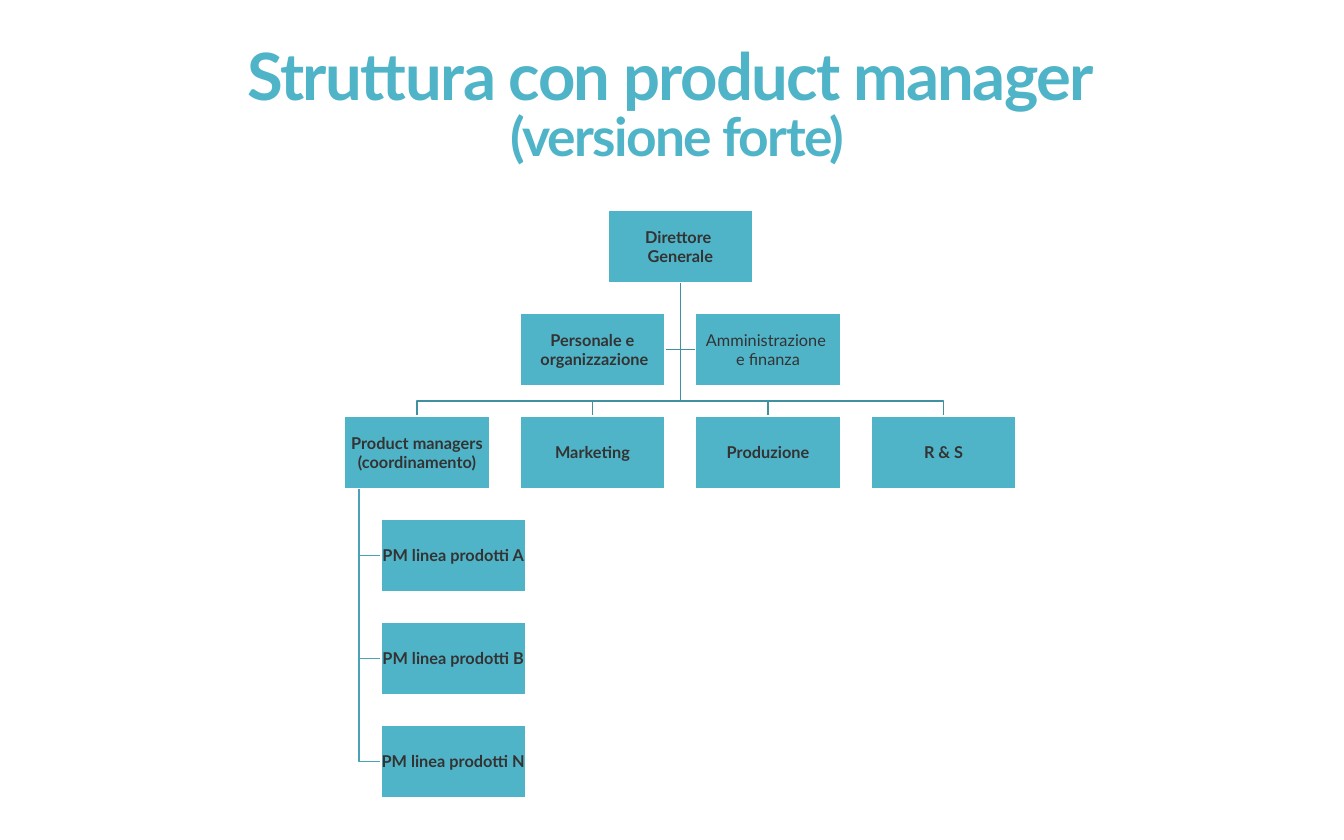
from dataclasses import dataclass

import pptx
import pptx.dml.color
import pptx.enum.shapes
import pptx.enum.text
import pptx.util

Inches = pptx.util.Inches
Point = tuple[int, int]

COLORS = {"teal": "50B4C8", "trunk": "4090A0", "branch": "49A3B6",
          "text": "333333", "white": "FFFFFF"}
FONT = "Lato"
SLIDE_WIDTH = Inches(12.6)
SLIDE_HEIGHT = SLIDE_WIDTH * 10 // 16
GRID_LEFT, GRID_TOP = Inches(3.23), Inches(1.97)
BOX_WIDTH, BOX_HEIGHT = Inches(1.36), Inches(0.68)
COLUMN_STEP, ROW_STEP = 1.21 * BOX_WIDTH, 1.42 * BOX_HEIGHT
BUS_RISE = 0.21 * BOX_HEIGHT
PRODUCT_COLUMN = 0.25 * BOX_WIDTH / COLUMN_STEP


@dataclass(frozen=True)
class Unit:
    label: str
    column: float
    row: int
    bold: bool = True

    @property
    def left(self) -> int:
        return round(GRID_LEFT + self.column * COLUMN_STEP)

    @property
    def top(self) -> int:
        return round(GRID_TOP + self.row * ROW_STEP)

    @property
    def right(self) -> int:
        return self.left + BOX_WIDTH

    @property
    def bottom(self) -> int:
        return self.top + BOX_HEIGHT

    @property
    def center(self) -> int:
        return self.left + BOX_WIDTH // 2

    @property
    def middle(self) -> int:
        return self.top + BOX_HEIGHT // 2


DIRECTOR = Unit("Direttore \nGenerale", 1.5, 0)
STAFF = [Unit("Personale e\n organizzazione", 1, 1),
         Unit("Amministrazione \ne finanza", 2, 1, bold=False)]
COORDINATION = Unit("Product managers\n(coordinamento)", 0, 2)
DEPARTMENTS = [COORDINATION] + [
    Unit(label, column, 2)
    for column, label in enumerate(["Marketing", "Produzione", "R & S"], start=1)]
PRODUCT_LINES = [Unit(f"PM linea prodotti {letter}", PRODUCT_COLUMN, row)
                 for row, letter in enumerate("ABN", start=3)]


def color(name: str) -> pptx.dml.color.RGBColor:
    return pptx.dml.color.RGBColor.from_string(COLORS[name])


def format_span(span, size: float, color_name: str, bold: bool) -> None:
    span.font.name = FONT
    span.font.size = pptx.util.Pt(size)
    span.font.bold = bold
    span.font.color.rgb = color(color_name)


def draw_title(page) -> None:
    box = page.shapes.add_textbox(Inches(1.56), Inches(0.38), Inches(9.58), Inches(1.26))
    frame = box.text_frame
    frame.word_wrap = False
    frame.auto_size = pptx.enum.text.MSO_AUTO_SIZE.SHAPE_TO_FIT_TEXT
    frame.margin_left = frame.margin_right = Inches(0.11)
    frame.margin_top = frame.margin_bottom = Inches(0.06)
    frame.text = "Struttura con product manager \n(versione forte)"
    for para, size in zip(frame.paragraphs, (44, 36)):
        para.alignment = pptx.enum.text.PP_ALIGN.CENTER
        para.line_spacing = 0.85
        for span in para.runs:
            format_span(span, size, "teal", True)
            span.font._element.set("spc", "-110")


def draw_link(page, points: list[Point], color_name: str) -> None:
    builder = page.shapes.build_freeform(*points[0])
    builder.add_line_segments(points[1:], close=False)
    link = builder.convert_to_shape()
    link.shadow.inherit = False
    link.fill.background()
    link.line.color.rgb = color(color_name)
    link.line.width = pptx.util.Pt(1)


def draw_unit(page, unit: Unit) -> None:
    box = page.shapes.add_shape(pptx.enum.shapes.MSO_SHAPE.RECTANGLE,
                                unit.left, unit.top, BOX_WIDTH, BOX_HEIGHT)
    box.shadow.inherit = False
    box.fill.solid()
    box.fill.fore_color.rgb = color("teal")
    box.line.color.rgb = color("white")
    box.line.width = pptx.util.Pt(1)
    frame = box.text_frame
    frame.word_wrap = False
    frame.vertical_anchor = pptx.enum.text.MSO_ANCHOR.MIDDLE
    frame.margin_left = frame.margin_right = Inches(0.01)
    frame.margin_top = frame.margin_bottom = Inches(0.01)
    frame.text = unit.label
    for para in frame.paragraphs:
        para.alignment = pptx.enum.text.PP_ALIGN.CENTER
        for span in para.runs:
            format_span(span, 11, "text", unit.bold)


def draw_links(page) -> None:
    trunk = DIRECTOR.center
    start = (trunk, DIRECTOR.bottom)
    for unit in STAFF:
        side = unit.right if unit.center < trunk else unit.left
        draw_link(page, [start, (trunk, unit.middle), (side, unit.middle)], "trunk")
    for unit in DEPARTMENTS:
        bus = round(unit.top - BUS_RISE)
        draw_link(page, [start, (trunk, bus), (unit.center, bus),
                         (unit.center, unit.top)], "trunk")
    stem = round(COORDINATION.left + 0.1 * BOX_WIDTH)
    for unit in PRODUCT_LINES:
        draw_link(page, [(stem, COORDINATION.bottom), (stem, unit.middle),
                         (unit.left, unit.middle)], "branch")


def main() -> None:
    deck = pptx.Presentation()
    deck.slide_width, deck.slide_height = SLIDE_WIDTH, SLIDE_HEIGHT
    page = deck.slides.add_slide(deck.slide_layouts[6])
    draw_title(page)
    draw_links(page)
    for unit in [DIRECTOR, *STAFF, *DEPARTMENTS, *PRODUCT_LINES]:
        draw_unit(page, unit)
    deck.save("out.pptx")


if __name__ == "__main__":
    main()
